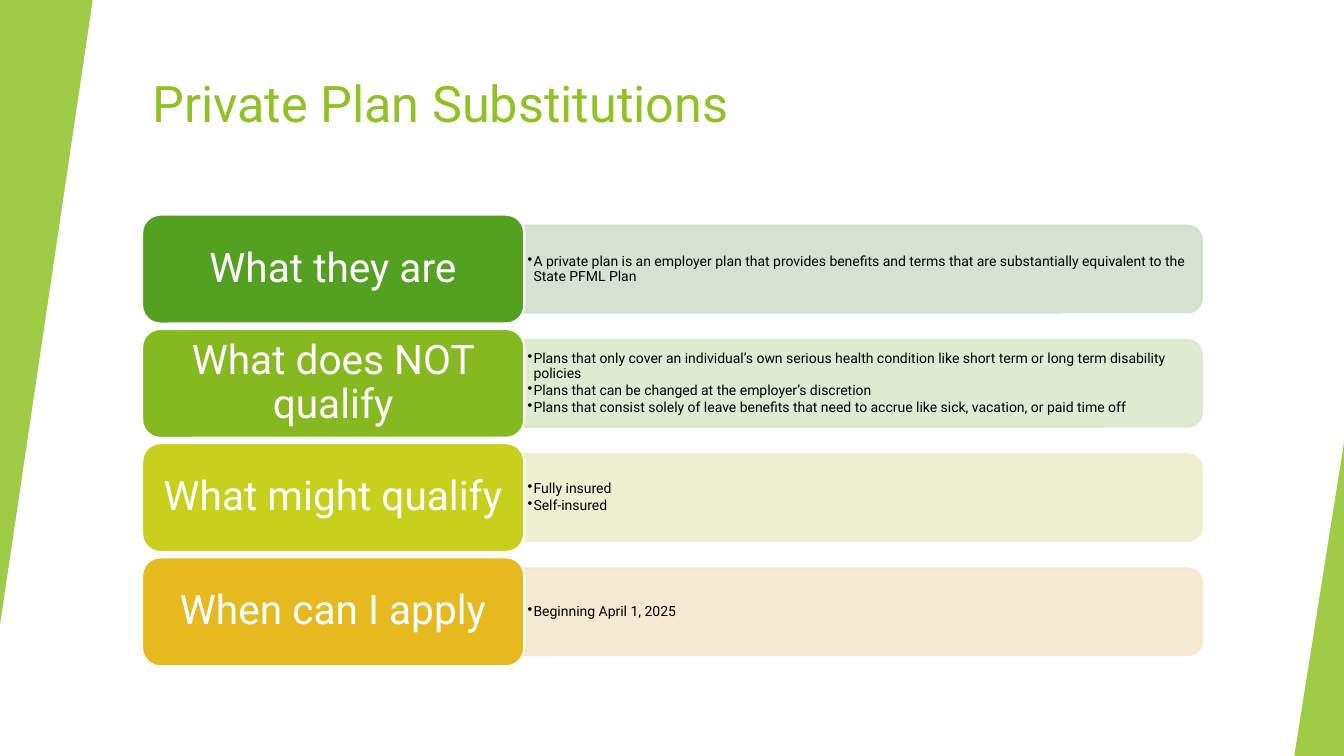
from dataclasses import dataclass
from lxml.etree import SubElement
from pptx import Presentation
from pptx.dml.color import RGBColor as Rgb
from pptx.enum.shapes import MSO_SHAPE as Kind
from pptx.enum.text import MSO_ANCHOR as Anchor, MSO_AUTO_SIZE as Auto, PP_ALIGN as Align
from pptx.oxml.ns import qn
from pptx.util import Inches, Pt

WIDE, HIGH = Inches(13.33), Inches(7.5)
GREEN, WHITE, BLACK = "90C226", "FFFFFF", "000000"
LEFT, MID = 10.58, 38.95
TOP, PITCH = 28.4, 15.11
LABEL_H, BAR_H, NOTE_H = 14.4, 11.47, 10.4


@dataclass
class Box:
    x: float
    y: float
    w: float
    h: float

    def emu(self) -> tuple[int, int, int, int]:
        return (int(WIDE * self.x / 100), int(HIGH * self.y / 100),
                int(WIDE * self.w / 100), int(HIGH * self.h / 100))


@dataclass
class Row:
    head: str
    dark: str
    pale: str
    notes: list[str]


@dataclass
class Wedge:
    box: Box
    turn: int


ROWS = [
    Row("What they are", "54A021", "D1DFCD", [
        "A private plan is an employer plan that provides benefits and terms "
        "that are substantially equivalent to the State PFML Plan"]),
    Row("What does NOT qualify", "86B820", "DCE8CC", [
        "Plans that only cover an individual’s own serious health condition "
        "like short term or long term disability policies",
        "Plans that can be changed at the employer’s discretion",
        "Plans that consist solely of leave benefits that need to accrue "
        "like sick, vacation, or paid time off"]),
    Row("What might qualify", "C7D01D", "EEEFCC", ["Fully insured", "Self-insured"]),
    Row("When can I apply", "E6B91E", "F5E7CD", ["Beginning April 1, 2025"]),
]
WEDGES = [Wedge(Box(0, 0, 6.9, 82.67), 180), Wedge(Box(96.3, 58.53, 3.7, 41.47), 0)]


def tint(part, color: str) -> None:
    part.rgb = Rgb.from_string(color)


def write(shape, lines: list[str], size: float, color: str, align=Align.LEFT,
          anchor=Anchor.MIDDLE, pad=(0.1, 0.05), gap=0.0, lead=0.9, bullet=False) -> None:
    frame = shape.text_frame
    frame.word_wrap = True
    frame.auto_size = Auto.NONE
    frame.vertical_anchor = anchor
    frame.margin_left = frame.margin_right = Inches(pad[0])
    frame.margin_top = frame.margin_bottom = Inches(pad[1])
    for i, line in enumerate(lines):
        para = frame.add_paragraph() if i else frame.paragraphs[0]
        para.alignment = align
        para.line_spacing = lead
        para.space_before, para.space_after = Pt(0), Pt(gap)
        run = para.add_run()
        run.text = line
        run.font.name, run.font.size = "Roboto", Pt(size)
        tint(run.font.color, color)
        if bullet:
            props = para._p.get_or_add_pPr()
            props.set("marL", str(Inches(0.06)))
            props.set("indent", str(-Inches(0.06)))
            SubElement(props, qn("a:buChar"), char="•")


def draw(slide, kind, box: Box, fill: str, line: str = "", alpha: int = 100, turn: int = 0):
    x, y, w, h = box.emu()
    if turn == 90:
        x, y, w, h = x + (w - h) // 2, y + (h - w) // 2, h, w
    shape = slide.shapes.add_shape(kind, x, y, w, h)
    shape.shadow.inherit = False
    shape.rotation = turn
    shape.fill.solid()
    tint(shape.fill.fore_color, fill)
    if line:
        shape.line.width = Pt(1.5)
        tint(shape.line.color, line)
    else:
        shape.line.fill.background()
    if alpha < 100:
        for node in list(shape.element.iter(qn("a:srgbClr"))):
            SubElement(node, qn("a:alpha"), val=str(alpha * 1000))
    return shape


def band(slide, row: Row, top: float) -> None:
    mid = top + LABEL_H / 2
    draw(slide, Kind.ROUND_2_SAME_RECTANGLE, Box(MID, mid - BAR_H / 2, 50.48, BAR_H),
         row.pale, line=row.pale, alpha=90, turn=90)
    note = slide.shapes.add_textbox(*Box(MID, mid - NOTE_H / 2, 50.18, NOTE_H).emu())
    write(note, row.notes, 10, BLACK, pad=(0.04, 0.02), gap=1.5, bullet=True)
    label = draw(slide, Kind.ROUNDED_RECTANGLE, Box(LEFT, top, 28.43, LABEL_H),
                 row.dark, line=WHITE)
    write(label, [row.head], 29, WHITE, align=Align.CENTER, pad=(0.12, 0.06))


def main() -> None:
    deck = Presentation()
    deck.slide_width, deck.slide_height = WIDE, HIGH
    slide = deck.slides.add_slide(deck.slide_layouts[5])
    title = slide.shapes.title
    title.left, title.top, title.width, title.height = Box(LEFT, 8.93, 83.63, 16).emu()
    write(title, ["Private Plan Substitutions"], 36, GREEN, anchor=Anchor.TOP, lead=1.0)
    for wedge in WEDGES:
        shape = draw(slide, Kind.ISOSCELES_TRIANGLE, wedge.box, GREEN,
                     alpha=85, turn=wedge.turn)
        shape.adjustments[0] = 1
    for i, row in enumerate(ROWS):
        band(slide, row, TOP + i * PITCH)
    deck.save("out.pptx")


if __name__ == "__main__":
    main()
